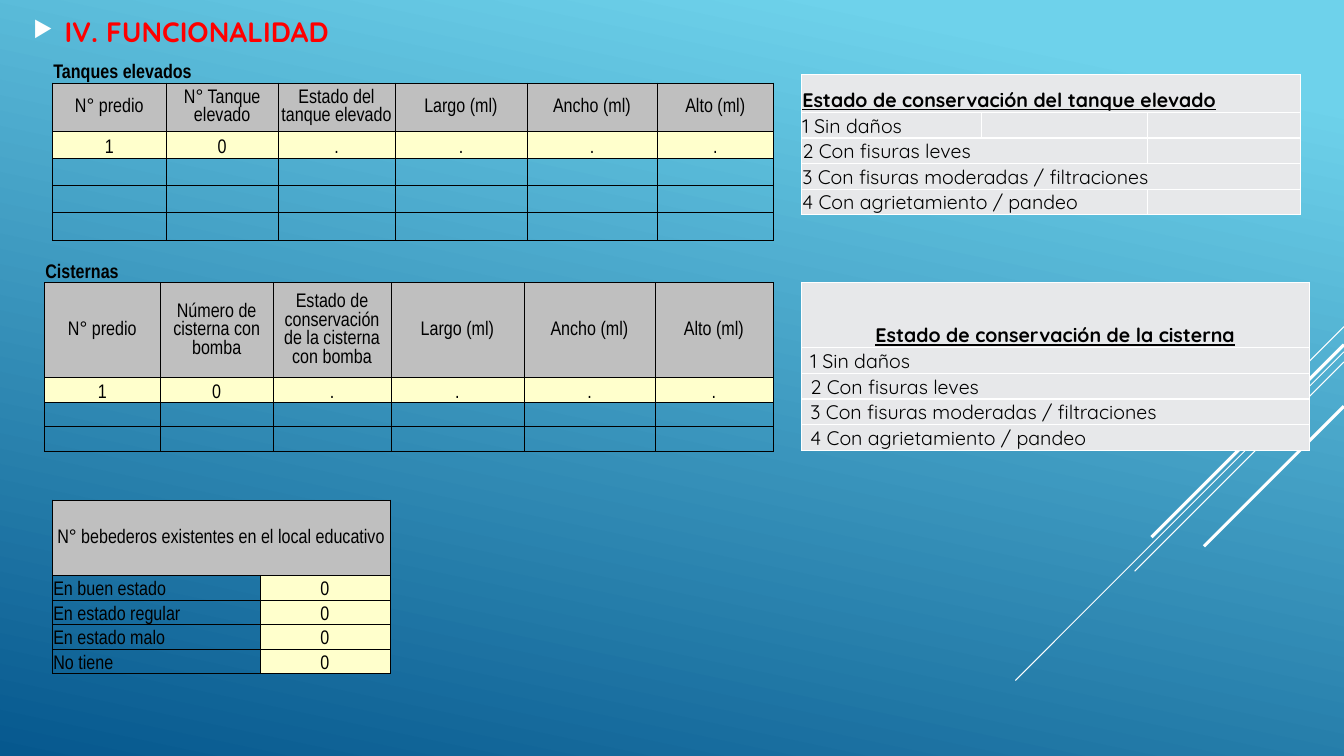
from lxml import etree
from pptx import Presentation
from pptx.dml.color import RGBColor
from pptx.enum.shapes import MSO_CONNECTOR
from pptx.enum.text import MSO_ANCHOR, PP_ALIGN
from pptx.oxml.ns import qn
from pptx.util import Pt

STRAIGHT = MSO_CONNECTOR.STRAIGHT
MIDDLE, BOTTOM = MSO_ANCHOR.MIDDLE, MSO_ANCHOR.BOTTOM
LEFT, CENTER = PP_ALIGN.LEFT, PP_ALIGN.CENTER

BLACK = RGBColor(0x00, 0x00, 0x00)
WHITE = RGBColor(0xFF, 0xFF, 0xFF)
RED = RGBColor(0xFF, 0x00, 0x00)
HEADER_GRAY = RGBColor(0xBF, 0xBF, 0xBF)
ENTRY_YELLOW = RGBColor(0xFF, 0xFF, 0xCC)
LEGEND_GRAY = RGBColor(0xE7, 0xE8, 0xEA)
SKY = RGBColor(0x6E, 0xD2, 0xEB)
DEEP_BLUE = RGBColor(0x06, 0x58, 0x8E)

NARROW, ROUNDED = "Arial Narrow", "Quicksand"
NO_TABLE_STYLE = "{2D5ABB26-0587-4C30-8999-92F81FD0307C}"
ALL_SIDES = ("L", "R", "T", "B")
SLIDE_WIDTH, SLIDE_HEIGHT = 960, 540

CONDITIONS = ["1 Sin daños", "2 Con fisuras leves",
              "3 Con fisuras moderadas / filtraciones", "4 Con agrietamiento / pandeo"]
DIMENSIONS = ["Largo (ml)", "Ancho (ml)", "Alto (ml)"]
FIRST_ENTRY = ["1", "0", ".", ".", ".", "."]


def draw_background(slide):
    fill = slide.background.fill
    fill.gradient()
    fill.gradient_angle = 258
    for stop, color, position in zip(fill.gradient_stops, (SKY, DEEP_BLUE), (0.1, 1)):
        stop.color.rgb = color
        stop.position = position


def draw_diagonals(slide, right):
    for top, run, weight in [(233.3, 72, 0.75), (251.3, 234.7, 0.75), (258.5, 149.5, 0.75),
                             (246.2, 137.5, 2.25), (290.2, 100, 2.25)]:
        diagonal = slide.shapes.add_connector(
            STRAIGHT, Pt(right), Pt(top), Pt(right - run), Pt(top + run))
        diagonal.line.color.rgb = WHITE
        diagonal.line.width = Pt(weight)
        etree.SubElement(diagonal._element.spPr, qn("a:effectLst"))


def draw_title(slide, left, top, width, height):
    title = slide.shapes.add_textbox(Pt(left), Pt(top), Pt(width), Pt(height))
    frame = title.text_frame
    frame.word_wrap = True
    frame.vertical_anchor = MIDDLE
    frame.text = "IV. FUNCIONALIDAD"
    paragraph = frame.paragraphs[0]
    paragraph.space_before, paragraph.space_after = Pt(4), Pt(6)
    style_run(paragraph.runs[0], ROUNDED, 20, RED, bold=True)
    properties = paragraph._p.get_or_add_pPr()
    properties.set("marL", str(Pt(22.5)))
    properties.set("indent", str(-Pt(22.5)))
    bullet_color = etree.SubElement(properties, qn("a:buClr"))
    etree.SubElement(bullet_color, qn("a:srgbClr"), val=str(WHITE))
    etree.SubElement(properties, qn("a:buSzPct"), val="80000")
    etree.SubElement(properties, qn("a:buChar"), char="▶")


def style_run(run, font_name, size, color, bold=False, underline=False):
    font = run.font
    font.name, font.size, font.bold, font.underline = font_name, Pt(size), bold, underline
    font.color.rgb = color


def set_borders(cell, sides, color, weight):
    properties = cell._tc.get_or_add_tcPr()
    for index, side in enumerate(sides):
        border = etree.Element(qn(f"a:ln{side}"), w=str(Pt(weight)))
        solid = etree.SubElement(border, qn("a:solidFill"))
        etree.SubElement(solid, qn("a:srgbClr"), val=str(color))
        properties.insert(index, border)


def new_table(slide, left, top, widths, heights):
    frame = slide.shapes.add_table(len(heights), len(widths), Pt(left), Pt(top),
                                   Pt(sum(widths)), Pt(sum(heights)))
    table = frame.table
    table.first_row = table.horz_banding = False
    table._tbl.tblPr.find(qn("a:tableStyleId")).text = NO_TABLE_STYLE
    for column, width in zip(table.columns, widths):
        column.width = Pt(width)
    for row, height in zip(table.rows, heights):
        row.height = Pt(height)
    return table


def fill_cell(cell, text="", fill=None, align=LEFT, anchor=BOTTOM, font_name=NARROW,
              bold=False, underline=False, inset=0.7, sides=ALL_SIDES,
              border=BLACK, weight=0.5):
    cell.margin_left, cell.margin_right = Pt(inset), Pt(0.7)
    cell.margin_top, cell.margin_bottom = Pt(0.7), Pt(0)
    cell.vertical_anchor = anchor
    if fill is None:
        cell.fill.background()
    else:
        cell.fill.solid()
        cell.fill.fore_color.rgb = fill
    set_borders(cell, sides, border, weight)
    cell.text_frame.text = text
    paragraph = cell.text_frame.paragraphs[0]
    paragraph.alignment = align
    for run in paragraph.runs:
        style_run(run, font_name, 14, BLACK, bold, underline)
    if not text:
        etree.SubElement(paragraph._p, qn("a:endParaRPr"), sz="1400")


def draw_measurements(slide, left, top, widths, heights, caption, headings, caption_span):
    table = new_table(slide, left, top, widths, heights)
    for column, (heading, entry) in enumerate(zip(headings + DIMENSIONS, FIRST_ENTRY)):
        fill_cell(table.cell(0, column), "" if column else caption, bold=True, sides=("B",))
        fill_cell(table.cell(1, column), heading, HEADER_GRAY, CENTER, MIDDLE)
        fill_cell(table.cell(2, column), entry, ENTRY_YELLOW, CENTER)
        for row in range(3, len(heights)):
            fill_cell(table.cell(row, column))
    if caption_span > 1:
        table.cell(0, 0).merge(table.cell(0, caption_span - 1))


def draw_legend(slide, left, top, widths, heights, heading, heading_align, inset, spans):
    table = new_table(slide, left, top, widths, heights)
    for row, (text, span) in enumerate(zip([heading] + CONDITIONS, spans)):
        is_heading = row == 0
        for column in range(len(widths)):
            fill_cell(table.cell(row, column), "" if column else text, LEGEND_GRAY,
                      heading_align if is_heading else LEFT, font_name=ROUNDED,
                      bold=is_heading, underline=is_heading,
                      inset=0.7 if is_heading else inset, border=WHITE, weight=1)
        if span > 1:
            table.cell(row, 0).merge(table.cell(row, span - 1))


def draw_fountains(slide, left, top, widths, heights):
    table = new_table(slide, left, top, widths, heights)
    heading = "N° bebederos existentes en el local educativo"
    for column, text in enumerate([heading, ""]):
        fill_cell(table.cell(0, column), text, HEADER_GRAY, CENTER, MIDDLE)
    table.cell(0, 0).merge(table.cell(0, 1))
    states = ["En buen estado", "En estado regular", "En estado malo", "No tiene"]
    for row, state in enumerate(states, start=1):
        fill_cell(table.cell(row, 0), state)
        fill_cell(table.cell(row, 1), "0", ENTRY_YELLOW, CENTER)


def main():
    presentation = Presentation()
    presentation.slide_width, presentation.slide_height = Pt(SLIDE_WIDTH), Pt(SLIDE_HEIGHT)
    slide = presentation.slides.add_slide(presentation.slide_layouts[6])
    draw_background(slide)
    draw_diagonals(slide, SLIDE_WIDTH)
    draw_title(slide, 16.5, 0, 672, 45.4)
    draw_measurements(slide, 37.4, 39.6, [81.4, 79.9, 83.5, 94.3, 92.9, 83.2],
                      [19.6, 31.7] + [19.5] * 4, "Tanques elevados",
                      ["N° predio", "N° Tanque elevado", "Estado del tanque elevado"], 2)
    draw_legend(slide, 572.4, 53.3, [128.9, 118.1, 109.4], [27] + [18.3] * 4,
                "Estado de conservación del tanque elevado", LEFT, 0.7, [3, 1, 2, 3, 2])
    draw_measurements(slide, 31.7, 184.3, [82.8, 80.6, 84.2, 95, 93.6, 84.2],
                      [16.4, 54.2] + [16.4] * 3, "Cisternas",
                      ["N° predio", "Número de cisterna con bomba",
                       "Estado de conservación de la cisterna con bomba"], 1)
    draw_legend(slide, 572.4, 201.6, [362.9], [46.8] + [18.3] * 4,
                "Estado de conservación de la cisterna", CENTER, 6.5, [1] * 5)
    draw_fountains(slide, 37.4, 357.1, [148.3, 92.9], [54] + [16.5] * 4)
    presentation.save("out.pptx")


if __name__ == "__main__":
    main()
